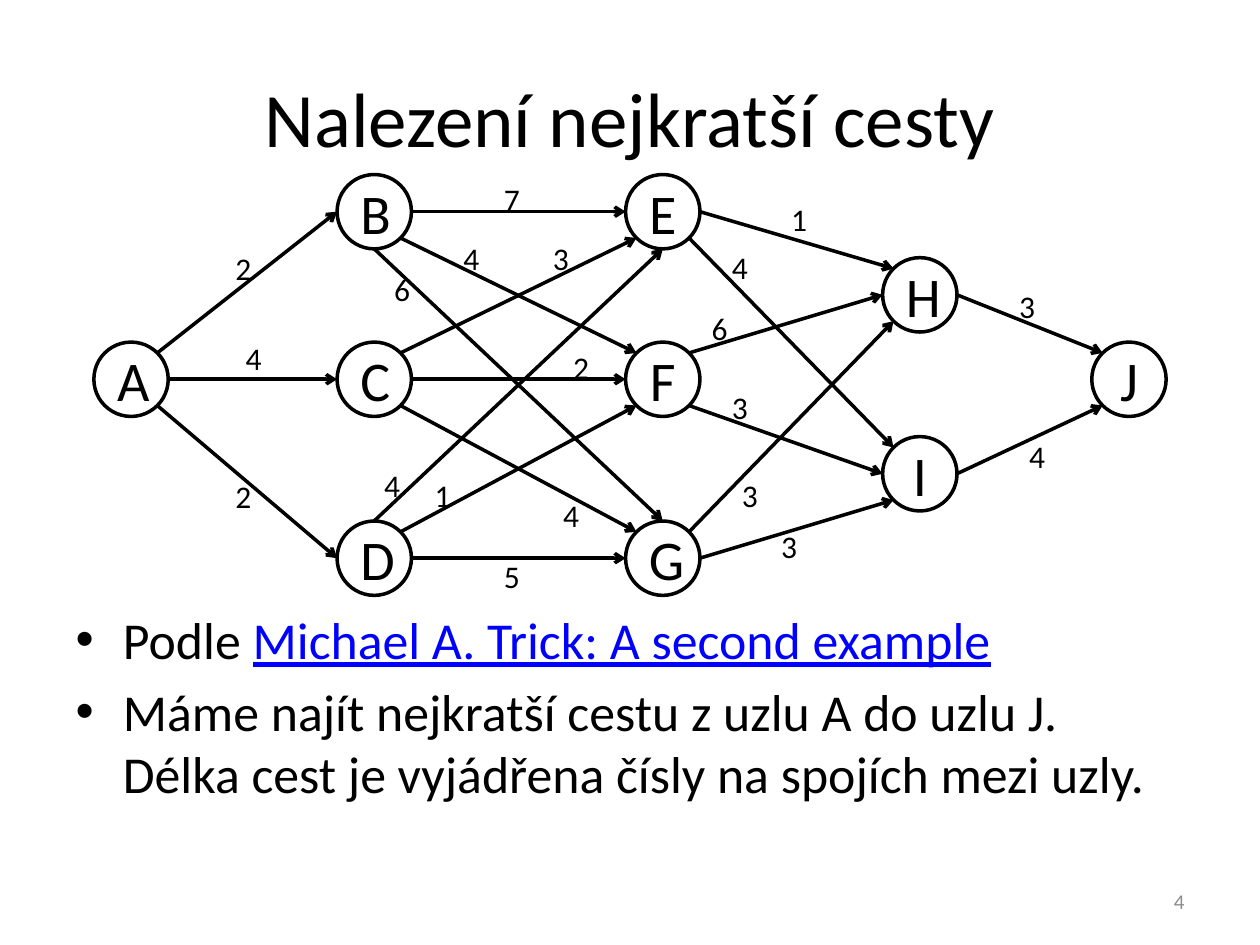
from math import cos, radians, sin

from lxml.etree import SubElement
from pptx import Presentation
from pptx.dml.color import RGBColor
from pptx.enum.shapes import MSO_CONNECTOR, MSO_SHAPE
from pptx.enum.text import MSO_ANCHOR, MSO_AUTO_SIZE, PP_ALIGN
from pptx.oxml.ns import qn
from pptx.util import Inches, Pt

# Content
TITLE = "Nalezení nejkratší cesty"
BULLETS = [
    [("Podle ", "text"), ("Michael A. Trick: A second example", "link")],
    [("Máme najít nejkratší cestu z uzlu A do uzlu J. "
      "Délka cest je vyjádřena čísly na spojích mezi uzly.", "text")],
]
PAGE = "4"

# Graph grid: column and row centres in inches, then node -> (column, row)
COLUMNS = [1.04, 2.97, 5.26, 7.3, 8.96]
ROWS = {"top": 1.68, "upper": 2.34, "middle": 3.01, "lower": 3.76, "bottom": 4.43}
NODES = {
    "A": (0, "middle"),
    "B": (1, "top"), "C": (1, "middle"), "D": (1, "bottom"),
    "E": (2, "top"), "F": (2, "middle"), "G": (2, "bottom"),
    "H": (3, "upper"), "I": (3, "lower"),
    "J": (4, "middle"),
}
DIAMETER = 0.59

# Compass point on a node's rim -> angle, clockwise from the right
RIM = {"E": 0, "SE": 45, "S": 90, "SW": 135, "W": 180, "NW": 225, "N": 270, "NE": 315}

# (start, leaves at, end, arrives at, length, label left, label top)
EDGES = [
    ("A", "NE", "B", "W", 2, 1.77, 1.93),
    ("A", "E", "C", "W", 4, 1.85, 2.64),
    ("A", "SE", "D", "W", 2, 1.77, 3.74),
    ("B", "E", "E", "W", 7, 3.9, 1.38),
    ("B", "SE", "F", "NW", 4, 3.58, 1.85),
    ("B", "S", "G", "N", 6, 3.03, 2.09),
    ("C", "NE", "E", "SW", 3, 4.29, 1.85),
    ("C", "E", "F", "W", 2, 4.45, 2.71),
    ("C", "SE", "G", "NW", 4, 4.37, 3.89),
    ("D", "N", "E", "S", 4, 2.95, 3.65),
    ("D", "NE", "F", "SW", 1, 3.35, 3.73),
    ("D", "E", "G", "W", 5, 3.9, 4.37),
    ("E", "E", "H", "NW", 1, 6.18, 1.54),
    ("E", "SE", "I", "NW", 4, 5.71, 1.92),
    ("F", "NE", "H", "W", 6, 5.55, 2.4),
    ("F", "SE", "I", "W", 3, 5.71, 3.03),
    ("G", "NE", "H", "SW", 3, 5.79, 3.73),
    ("G", "E", "I", "SW", 3, 6.1, 4.13),
    ("H", "E", "J", "NW", 3, 7.99, 2.23),
    ("I", "E", "J", "SW", 4, 8.07, 3.42),
]

COLORS = {"text": "000000", "link": "0000FF", "page": "8C8C8C"}
FONT = "Calibri"


def add_run(paragraph, text, size, color="text", underline=None):
    run = paragraph.add_run()
    run.text = text
    formats = {"name": FONT, "size": Pt(size), "underline": underline}
    for attribute, value in formats.items():
        setattr(run.font, attribute, value)
    run.font.color.rgb = RGBColor.from_string(COLORS[color])


def place(shape, *box):
    for attribute, value in zip(("left", "top", "width", "height"), box):
        setattr(shape, attribute, Inches(value))


def draw_line(line):
    line.color.rgb = RGBColor.from_string(COLORS["text"])
    line.width = Pt(2)


def center(node):
    column, row = NODES[node]
    return COLUMNS[column], ROWS[row]


def rim_point(node, direction):
    x, y = center(node)
    angle = radians(RIM[direction])
    return (Inches(x + DIAMETER / 2 * cos(angle)),
            Inches(y + DIAMETER / 2 * sin(angle)))


def add_label(shapes, text, box, size, color="text"):
    label = shapes.add_textbox(*map(Inches, box))
    label.text_frame.word_wrap = True
    add_run(label.text_frame.paragraphs[0], text, size, color)
    return label.text_frame


def add_node(shapes, name):
    x, y = center(name)
    box = (x - DIAMETER / 2, y - DIAMETER / 2, DIAMETER, DIAMETER)
    node = shapes.add_shape(MSO_SHAPE.OVAL, *map(Inches, box))
    node.shadow.inherit = False
    node.fill.background()
    draw_line(node.line)
    node.text_frame.vertical_anchor = MSO_ANCHOR.MIDDLE
    paragraph = node.text_frame.paragraphs[0]
    paragraph.alignment = PP_ALIGN.CENTER
    add_run(paragraph, name, 32)


def add_arrow(shapes, begin, end):
    arrow = shapes.add_connector(MSO_CONNECTOR.STRAIGHT, *begin, *end)
    draw_line(arrow.line)
    properties = arrow.element.spPr
    SubElement(properties.find(qn("a:ln")), qn("a:tailEnd"), type="arrow")
    SubElement(properties, qn("a:effectLst"))


def main():
    presentation = Presentation()
    presentation.slide_width, presentation.slide_height = Inches(10), Inches(7.5)
    slide = presentation.slides.add_slide(presentation.slide_layouts[1])
    shapes = slide.shapes

    # Title
    title = shapes.title
    place(title, 0.5, 0.3, 9, 1.25)
    title.text_frame.vertical_anchor = MSO_ANCHOR.MIDDLE
    add_run(title.text_frame.paragraphs[0], TITLE, 44)

    # Bullets
    body = slide.placeholders[1]
    place(body, 0.5, 4.77, 9, 1.93)
    body.text_frame.auto_size = MSO_AUTO_SIZE.NONE
    for index, runs in enumerate(BULLETS):
        frame = body.text_frame
        paragraph = frame.add_paragraph() if index else frame.paragraphs[0]
        for text, kind in runs:
            add_run(paragraph, text, 29.6, kind, True if kind == "link" else None)

    # Page number
    page = add_label(shapes, PAGE, (7.17, 6.95, 2.33, 0.4), 12, "page")
    page.vertical_anchor = MSO_ANCHOR.MIDDLE
    page.paragraphs[0].alignment = PP_ALIGN.RIGHT

    # Graph: nodes, then arrows with their lengths
    for name in NODES:
        add_node(shapes, name)
    for start, leave, end, arrive, length, left, top in EDGES:
        add_arrow(shapes, rim_point(start, leave), rim_point(end, arrive))
        add_label(shapes, str(length), (left, top, 0.39, 0.4), 18)

    presentation.save("out.pptx")


if __name__ == "__main__":
    main()
